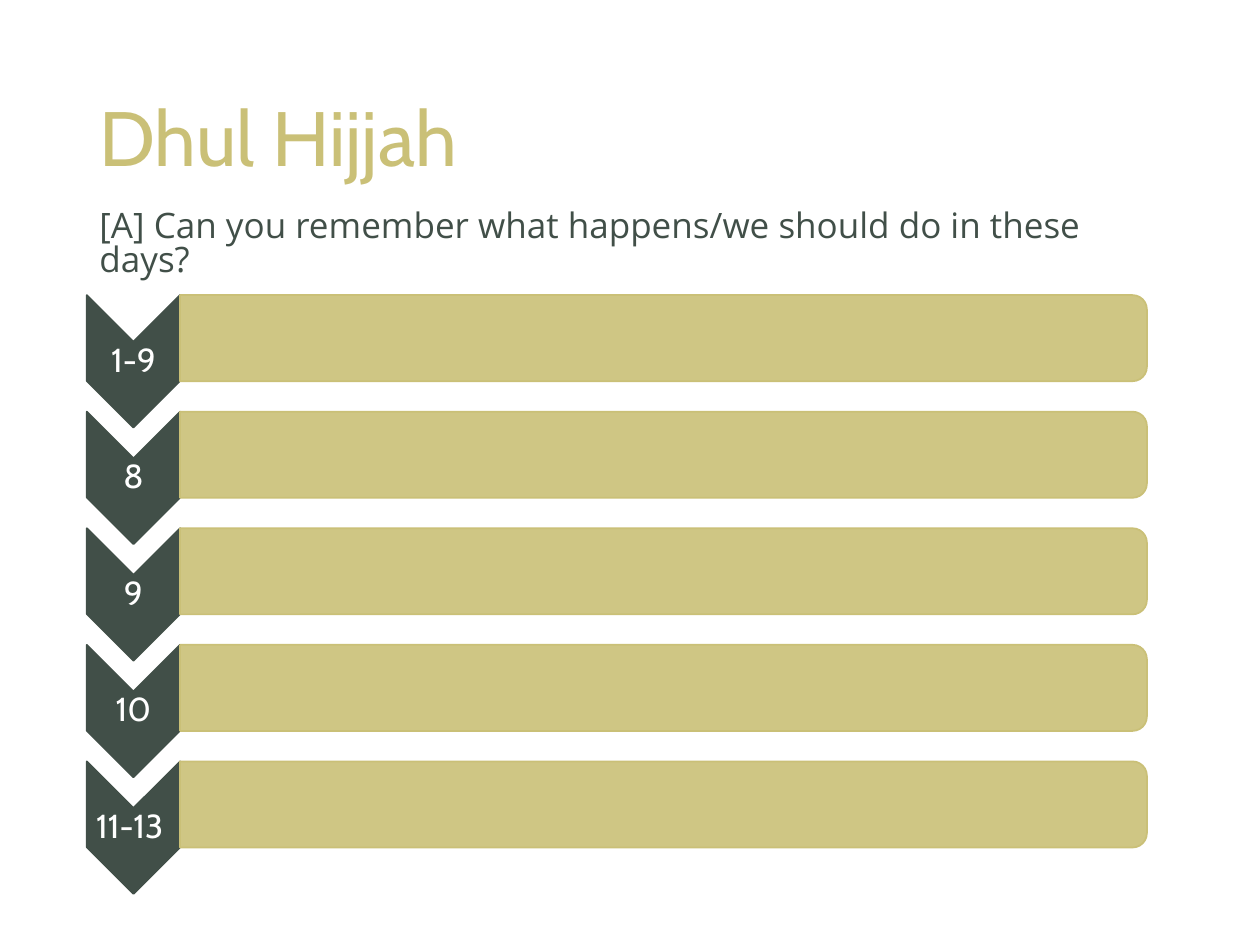
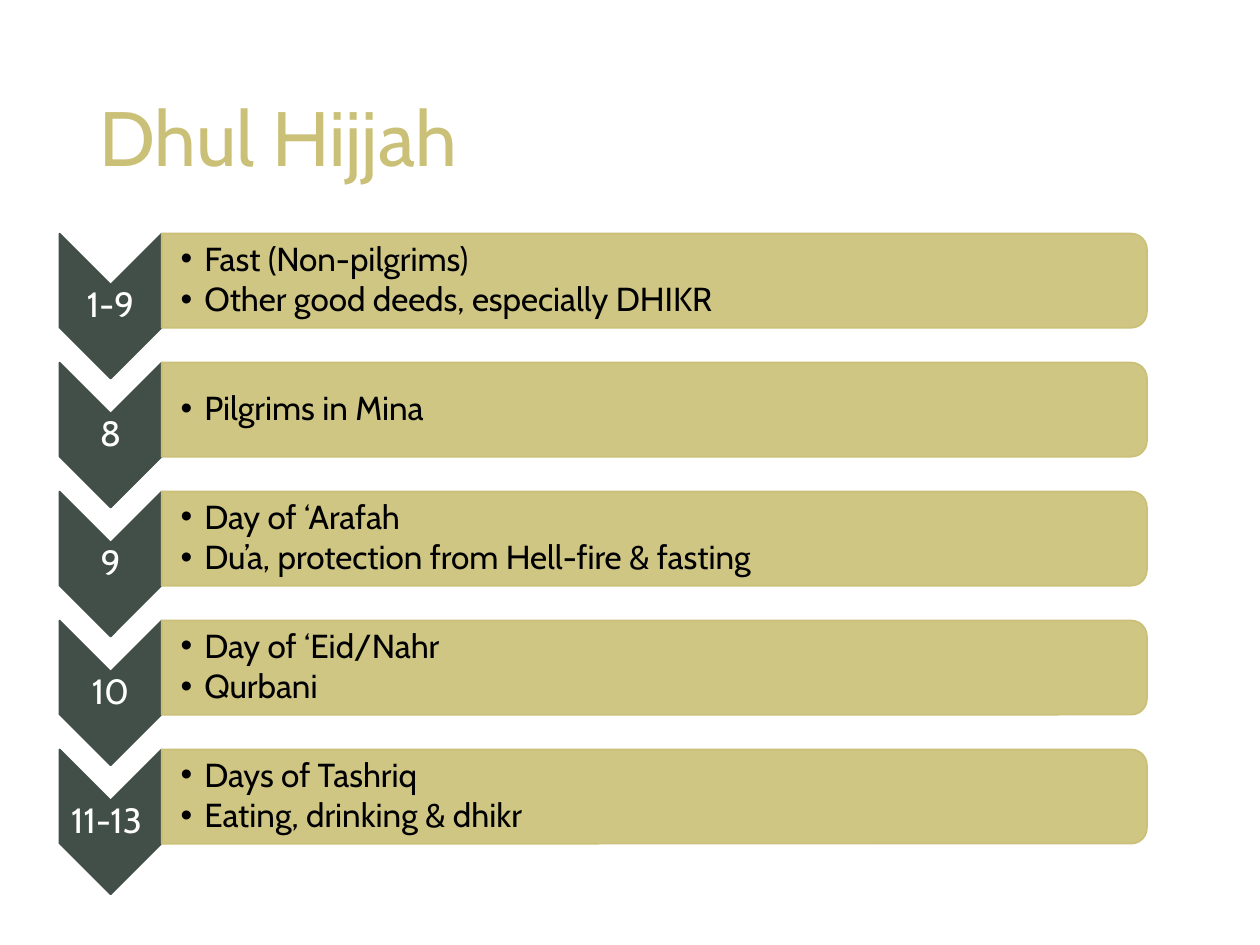
import pptx
import pptx.util
import pptx.dml.color
import pptx.enum.shapes
import pptx.enum.text
import pptx.oxml
import pptx.oxml.ns
from lxml import etree

Cm, Pt = pptx.util.Cm, pptx.util.Pt
SHAPE = pptx.enum.shapes.MSO_SHAPE
ALIGN = pptx.enum.text.PP_ALIGN
ANCHOR = pptx.enum.text.MSO_ANCHOR

TITLE = "Dhul Hijjah"
QUESTION = "[A] Can you remember what happens/we should do in these days?"
DAYS = [
    ("1-9", ["Fast (Non-pilgrims)", "Other good deeds, especially DHIKR"]),
    ("8", ["Pilgrims in Mina"]),
    ("9", ["Day of ‘Arafah", "Du’a, protection from Hell-fire & fasting"]),
    ("10", ["Day of ‘Eid/Nahr", "Qurbani"]),
    ("11-13 ", ["Days of Tashriq", "Eating, drinking & dhikr"]),
]
SLIDES = [
    dict(question=QUESTION, answers=False, label_size=19,
         left=1.75, top=5.95, width=1.88, height=2.67, pitch=2.35),
    dict(question=None, answers=True, label_size=20,
         left=1.2, top=4.71, width=2.06, height=2.92, pitch=2.6),
]

COLORS = {"gold": "CAC077", "green": "414F48", "white": "FFFFFF", "black": "000000"}
HEADING_FONT, BODY_FONT = "Cabin", "Open Sans"
BAR_RIGHT = 23.12
BAR_SHARE = 0.65
BAR_OPACITY = 90
BULLET_INDENT = 0.48


def rgb(name):
    return pptx.dml.color.RGBColor.from_string(COLORS[name])


def add_xml(parent, tag, **attrs):
    child = etree.SubElement(parent, pptx.oxml.ns.qn(tag))
    for key, value in attrs.items():
        child.set(key, str(value))
    return child


def write(tf, lines, size, color, font=HEADING_FONT, align=ALIGN.LEFT, anchor=ANCHOR.MIDDLE,
          spacing=0.9, before=0, after=0, bullet=None, insets=None):
    tf.word_wrap = True
    tf.auto_size = pptx.enum.text.MSO_AUTO_SIZE.NONE
    tf.vertical_anchor = anchor
    if insets:
        tf.margin_left, tf.margin_top, tf.margin_right, tf.margin_bottom = map(Cm, insets)
    for i, line in enumerate(lines):
        p = tf.add_paragraph() if i else tf.paragraphs[0]
        p.alignment, p.line_spacing = align, spacing
        p.space_before, p.space_after = Pt(before), Pt(after)
        indent = Cm(BULLET_INDENT) if bullet else 0
        pPr = p._p.get_or_add_pPr()
        pPr.set("marL", str(indent))
        pPr.set("indent", str(-indent))
        if bullet:
            p.level = 1
            add_xml(pPr, "a:buFont", typeface="Arial")
            add_xml(pPr, "a:buChar", char=bullet)
        else:
            add_xml(pPr, "a:buNone")
        r = p.add_run()
        r.text = line
        r.font.size, r.font.name = Pt(size), font
        r.font.color.rgb = rgb(color)


def place(sp, left, top, width, height):
    sp.left, sp.top, sp.width, sp.height = Cm(left), Cm(top), Cm(width), Cm(height)


def add_turned(shapes, kind, color, left, top, width, height):
    shift = (width - height) / 2
    sp = shapes.add_shape(kind, Cm(left + shift), Cm(top - shift), Cm(height), Cm(width))
    sp.rotation = 90
    sp.shadow.inherit = False
    sp.fill.solid()
    sp.fill.fore_color.rgb = sp.line.color.rgb = rgb(color)
    sp.line.width = Pt(1)
    return sp


def add_box(shapes, lines, left, top, width, height, **fmt):
    sp = shapes.add_textbox(Cm(left), Cm(top), Cm(width), Cm(height))
    write(sp.text_frame, lines, **fmt)


def add_timeline(s, left, top, width, height, pitch, label_size, answers):
    shapes = s.shapes.add_group_shape().shapes
    bar_left, bar_height = left + width, height * BAR_SHARE
    bar_width = BAR_RIGHT - bar_left
    for i, (day, deeds) in enumerate(DAYS):
        y = top + i * pitch
        add_turned(shapes, SHAPE.CHEVRON, "green", left, y, width, height)
        add_box(shapes, [day], left, y + width / 2, width, height - width,
                size=label_size, color="white", align=ALIGN.CENTER, insets=[0.03] * 4)
        bar = add_turned(shapes, SHAPE.ROUND_2_SAME_RECTANGLE, "gold",
                         bar_left, y, bar_width, bar_height)
        fill = bar._element.spPr.find(pptx.oxml.ns.qn("a:solidFill"))
        add_xml(fill[0], "a:alpha", val=BAR_OPACITY * 1000)
        if answers:
            add_box(shapes, deeds, bar_left, y + 0.09, bar_width - 0.09, bar_height - 0.18,
                    size=19, color="black", after=2.6, bullet="•",
                    insets=[0.38, 0.03, 0.03, 0.03])


def add_slide(prs, question, **timeline):
    s = prs.slides.add_slide(prs.slide_layouts[1 if question else 5])
    place(s.shapes.title, 1.75, 1.01, 21.9, 3.68)
    write(s.shapes.title.text_frame, [TITLE], size=44, color="gold")
    if question:
        body = s.placeholders[1]
        place(body, 1.75, 4.14, 21.9, 12.09)
        write(body.text_frame, [question], size=20, color="green", font=BODY_FONT,
              anchor=ANCHOR.TOP, spacing=0.8, before=10)
    add_timeline(s, **timeline)


def main():
    prs = pptx.Presentation()
    prs.slide_width, prs.slide_height = Cm(25.4), Cm(19.05)
    for content in SLIDES:
        add_slide(prs, **content)
    prs.save("out.pptx")


if __name__ == "__main__":
    main()
